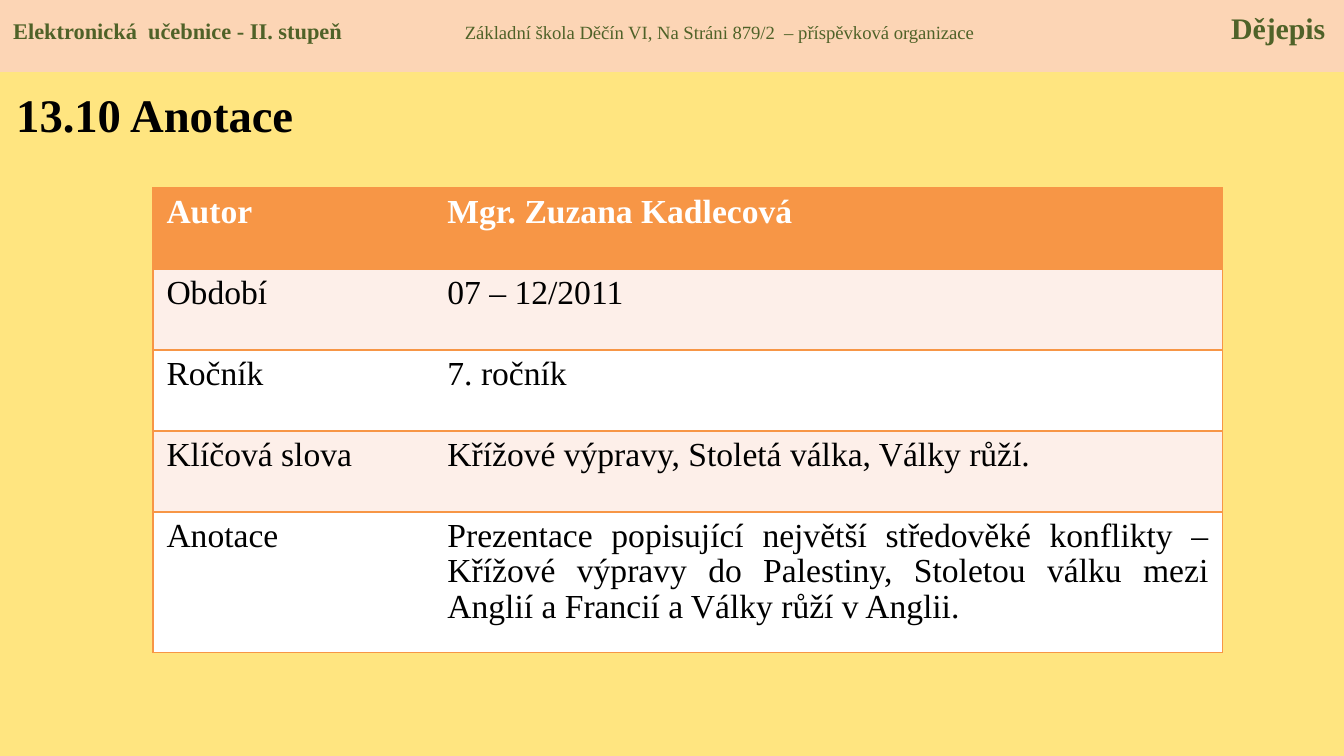
from dataclasses import dataclass
from pptx import Presentation
from pptx.dml.color import RGBColor as Rgb
from pptx.enum.shapes import MSO_SHAPE as Kind
from pptx.enum.text import MSO_ANCHOR as Anchor, MSO_AUTO_SIZE as Fit, PP_ALIGN as Align
from pptx.oxml import parse_xml as parse
from pptx.oxml.ns import nsdecls, qn
from pptx.util import Pt


@dataclass(frozen=True)
class Theme:
    """Colours and type sizes of the slide."""
    font: str = "Times New Roman"
    page: str = "FFE580"
    band: str = "FCD5B5"
    green: str = "4F6228"
    black: str = "000000"
    white: str = "FFFFFF"
    orange: str = "F79646"
    pale: str = "FDEFE9"
    title: int = 25
    cell: int = 18
    left: int = 12
    mid: int = 10
    right: int = 16


LOOK = Theme()
NO_STYLE = "{2D5ABB26-0587-4C30-8999-92F81FD0307C}"
ROWS = [
    ("Autor", "Mgr. Zuzana Kadlecová"),
    ("Období", "07 – 12/2011"),
    ("Ročník", "7. ročník"),
    ("Klíčová slova", "Křížové výpravy, Stoletá válka, Války růží."),
    ("Anotace", "Prezentace popisující největší středověké konflikty – Křížové výpravy "
                "do Palestiny, Stoletou válku mezi Anglií a Francií a Války růží v Anglii."),
]


def paint(fill, tint):
    """Fill with one solid colour."""
    fill.solid()
    fill.fore_color.rgb = Rgb.from_string(tint)


def write(para, text, size, tint, bold=False):
    """Add one formatted run to a paragraph."""
    run = para.add_run()
    run.text = text
    font = run.font
    font.name, font.size, font.bold = LOOK.font, Pt(size), bold
    font.color.rgb = Rgb.from_string(tint)


def frame(shape, top):
    """Set the text frame to start at the top and return its paragraph."""
    body = shape.text_frame
    body.word_wrap, body.auto_size = True, Fit.NONE
    body.vertical_anchor, body.margin_top = Anchor.TOP, Pt(top)
    para = body.paragraphs[0]
    para.alignment = Align.LEFT
    return para


def header(slide, x, y, w, h):
    """Draw the top band with three texts set on tab stops."""
    band = slide.shapes.add_shape(Kind.RECTANGLE, Pt(x), Pt(y), Pt(w), Pt(h))
    band.shadow.inherit = False
    paint(band.fill, LOOK.band)
    band.line.fill.background()
    para = frame(band, 5)
    stops = "".join(f'<a:tab pos="{Pt(pos)}" algn="{side}"/>'
                    for pos, side in ((242, "l"), (w - 17, "r")))
    para._p.get_or_add_pPr().append(parse(f'<a:tabLst {nsdecls("a")}>{stops}</a:tabLst>'))
    write(para, "Elektronická  učebnice - II. stupeň", LOOK.left, LOOK.green, True)
    write(para, "\tZákladní škola Děčín VI, Na Stráni 879/2  – příspěvková organizace",
          LOOK.mid, LOOK.green)
    write(para, "\tDějepis", LOOK.right, LOOK.green, True)


def heading(slide, x, y, w, h):
    """Place and fill the title placeholder."""
    title = slide.shapes.title
    title.left, title.top, title.width, title.height = Pt(x), Pt(y), Pt(w), Pt(h)
    write(frame(title, 6.5), "13.10 Anotace", LOOK.title, LOOK.black, True)


def edge(cell, sides):
    """Draw orange borders on the given sides of a cell."""
    props = cell._tc.get_or_add_tcPr()
    for spot, side in enumerate(sides):
        props.insert(spot, parse(
            f'<a:ln{side} {nsdecls("a")} w="{Pt(1)}"><a:solidFill>'
            f'<a:srgbClr val="{LOOK.orange}"/></a:solidFill></a:ln{side}>'))


def facts(slide, x, y, w, h):
    """Draw the table, with the last row taking the height left over."""
    first, tall = 150.5, 43.4
    last = len(ROWS) - 1
    table = slide.shapes.add_table(len(ROWS), 2, Pt(x), Pt(y), Pt(w), Pt(h)).table
    table._tbl.tblPr.find(qn("a:tableStyleId")).text = NO_STYLE
    table.horz_banding = False
    for col, wide in zip(table.columns, (first, w - first)):
        col.width = Pt(wide)
    for i, texts in enumerate(ROWS):
        table.rows[i].height = Pt(h - last * tall if i == last else tall)
        tint = LOOK.orange if i == 0 else LOOK.pale if i % 2 else LOOK.white
        for j, text in enumerate(texts):
            cell = table.cell(i, j)
            paint(cell.fill, tint)
            edge(cell, "RTB" if j else "LTB")
            para = cell.text_frame.paragraphs[0]
            para.line_spacing = 0.96
            para.alignment = Align.JUSTIFY if i == last and j else Align.LEFT
            write(para, text, LOOK.cell, LOOK.black if i else LOOK.white, i == 0)


def main():
    """Build and save the slide."""
    deck = Presentation()
    deck.slide_width, deck.slide_height = Pt(720), Pt(405)
    slide = deck.slides.add_slide(deck.slide_layouts[5])
    paint(slide.background.fill, LOOK.page)
    header(slide, 0, 0, 720, 38.6)
    heading(slide, 1.5, 39.6, 301.5, 46.8)
    facts(slide, 82, 100.7, 573, 249)
    deck.save("out.pptx")


if __name__ == "__main__":
    main()
